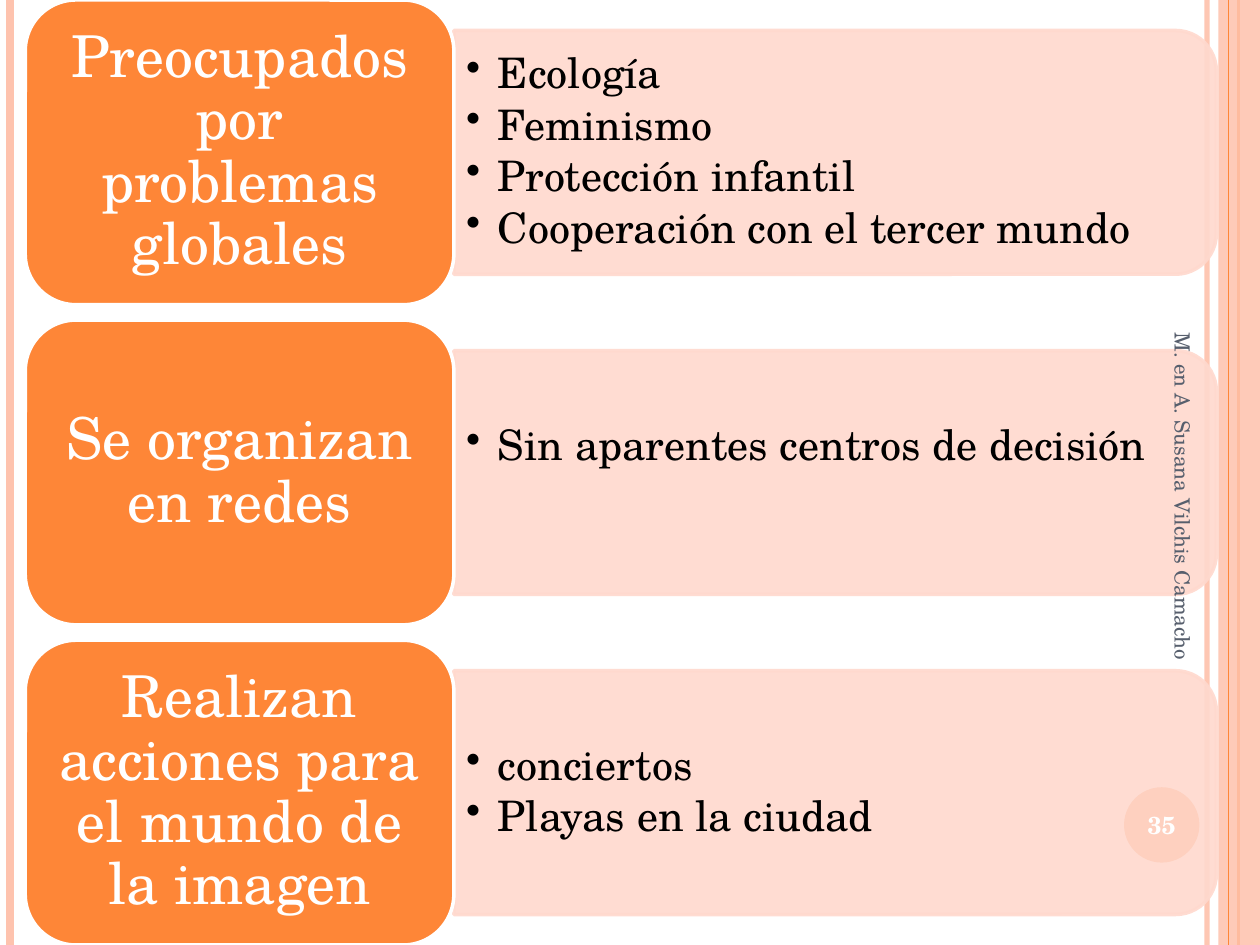
import dataclasses

import pptx
import pptx.dml.color
import pptx.enum.shapes
import pptx.enum.text
import pptx.oxml
import pptx.oxml.ns
import pptx.util
from pptx.util import Cm

SHAPE = pptx.enum.shapes.MSO_SHAPE
ALIGN = pptx.enum.text.PP_ALIGN
MIDDLE = pptx.enum.text.MSO_ANCHOR.MIDDLE


@dataclasses.dataclass(frozen=True)
class Theme:
    """Colours, font and type sizes of the slide."""
    accent: str = "FE8637"
    band: str = "FEC3AE"
    panel: str = "FFD9CE"
    white: str = "FFFFFF"
    black: str = "000000"
    grey: str = "575F6D"
    font: str = "TeX Gyre Schola"
    label: float = 33
    item: float = 24
    number: float = 14
    footer: float = 12


THEME = Theme()

ROWS = [
    ("Preocupados por problemas globales",
     ["Ecología", "Feminismo", "Protección infantil", "Cooperación con el tercer mundo"], 0),
    ("Se organizan en redes", ["Sin aparentes centros de decisión"], 1.04),
    ("Realizan acciones para el mundo de la imagen", ["conciertos", "Playas en la ciudad"], 0),
]


def rgb(value):
    """Return the colour object of a hex value."""
    return pptx.dml.color.RGBColor.from_string(value)


def assign(obj, values):
    """Set attributes from a dict of format values."""
    for name, value in values.items():
        setattr(obj, name, value)


def set_alpha(s, percent):
    """Make every colour of a shape or connector partly transparent."""
    for clr in s.element.spPr.iter(pptx.oxml.ns.qn("a:srgbClr")):
        alpha = pptx.oxml.parse_xml(f'<a:alpha {pptx.oxml.ns.nsdecls("a")} val="{percent * 1000}"/>')
        clr.append(alpha)


def add_shape(slide, kind, box, fill, line=None, alpha=None):
    """Add a flat preset shape in a box given in centimetres."""
    s = slide.shapes.add_shape(kind, *map(Cm, box))
    s.shadow.inherit = False
    s.fill.solid()
    s.fill.fore_color.rgb = rgb(fill)
    if line:
        s.line.color.rgb = rgb(line)
        s.line.width = pptx.util.Pt(2)
    else:
        s.line.fill.background()
    if alpha:
        set_alpha(s, alpha)
    return s


def add_rule(slide, x, height, color, width, alpha=None):
    """Add a vertical line of the given height."""
    c = slide.shapes.add_connector(
        pptx.enum.shapes.MSO_CONNECTOR.STRAIGHT, Cm(x), 0, Cm(x), Cm(height))
    c.line.color.rgb = rgb(color)
    c.line.width = pptx.util.Pt(width)
    c.element.spPr.append(pptx.oxml.parse_xml(f'<a:effectLst {pptx.oxml.ns.nsdecls("a")}/>'))
    if alpha:
        set_alpha(c, alpha)


def write(s, lines, size, color, align=ALIGN.LEFT, bold=False, after=0, spacing=1.0,
          bullet=False, **frame):
    """Write paragraphs into a shape and return the shape."""
    tf = s.text_frame
    assign(tf, {"word_wrap": True, "vertical_anchor": MIDDLE, **frame})
    for i, line in enumerate(lines):
        p = tf.add_paragraph() if i else tf.paragraphs[0]
        assign(p, {"alignment": align, "line_spacing": spacing,
                   "space_after": pptx.util.Pt(size * after)})
        r = p.add_run()
        r.text = line
        assign(r.font, {"name": THEME.font, "size": pptx.util.Pt(size), "bold": bold})
        r.font.color.rgb = rgb(color)
        if bullet:
            ppr = p._p.get_or_add_pPr()
            ppr.set("marL", str(Cm(0.64)))
            ppr.set("indent", str(-Cm(0.64)))
            ppr.append(pptx.oxml.parse_xml(
                f'<a:buChar {pptx.oxml.ns.nsdecls("a")} char="•"/>'))
    return s


def add_frame(slide, width, height):
    """Draw the side bands and the page disc."""
    add_rule(slide, width - 1.07, height, THEME.band, 3, 93)
    add_rule(slide, 0.2, height, THEME.band, 4.5)
    add_rule(slide, width - 0.43, height, THEME.accent, 1.5)
    add_shape(slide, SHAPE.RECTANGLE, (width - 0.84, 0, 0.84, height), THEME.band, alpha=87)
    add_rule(slide, width - 0.64, height, THEME.accent, 0.75)
    add_shape(slide, SHAPE.OVAL, (width - 2.74, height - 3.18, 1.52, 1.52), THEME.accent)


def add_row(slide, box, label, items, lift):
    """Draw a label block with its panel of bullet items."""
    x, y, w, h = box
    label_w, panel_h = 8.64, 0.8 * h
    panel_x, panel_w = x + label_w, w - label_w
    mid_x, mid_y = panel_x + panel_w / 2, y + h / 2
    panel = add_shape(
        slide, SHAPE.ROUND_2_SAME_RECTANGLE,
        (mid_x - panel_h / 2, mid_y - panel_w / 2, panel_h, panel_w),
        THEME.panel, THEME.panel, 90)
    panel.rotation = 90
    text_h = panel_h - 0.48
    tb = slide.shapes.add_textbox(
        *map(Cm, (panel_x, mid_y - text_h / 2, panel_w - 0.26, text_h)))
    write(tb, items, THEME.item, THEME.black, after=0.15, spacing=0.9, bullet=True,
          margin_bottom=Cm(0.13 + lift))
    block = add_shape(slide, SHAPE.ROUNDED_RECTANGLE, (x, y, label_w, h),
                      THEME.accent, THEME.white)
    write(block, [label], THEME.label, THEME.white, ALIGN.CENTER, spacing=0.9, after=0.35,
          margin_left=Cm(0.36), margin_right=Cm(0.36),
          margin_top=Cm(0.18), margin_bottom=Cm(0.18))


def add_rows(slide, box, gap):
    """Stack the rows evenly in the box."""
    x, y, w, h = box
    row_h = (h - gap * (len(ROWS) - 1)) / len(ROWS)
    for i, (label, items, lift) in enumerate(ROWS):
        add_row(slide, (x, y + i * (row_h + gap), w, row_h), label, items, lift)


def add_footer(slide, width, height):
    """Place the page number and the rotated author name."""
    tb = slide.shapes.add_textbox(*map(Cm, (width - 2.74, height - 3.18, 1.52, 1.52)))
    write(tb, ["35"], THEME.number, THEME.white, ALIGN.CENTER, bold=True,
          margin_left=0, margin_right=0)
    tb = slide.shapes.add_textbox(*map(Cm, (19.4, 10.39, 8.89, 1.02)))
    tb.rotation = 90
    write(tb, ["M. en A. Susana Vilchis Camacho"], THEME.footer, THEME.grey)


def main():
    """Build and save the slide."""
    prs = pptx.Presentation()
    width, height = 25.4, 19.05
    assign(prs, {"slide_width": Cm(width), "slide_height": Cm(height)})
    slide = prs.slides.add_slide(prs.slide_layouts[6])
    add_frame(slide, width, height)
    add_rows(slide, (0.51, 0, 24.01, height), 0.31)
    add_footer(slide, width, height)
    prs.save("out.pptx")


if __name__ == "__main__":
    main()
